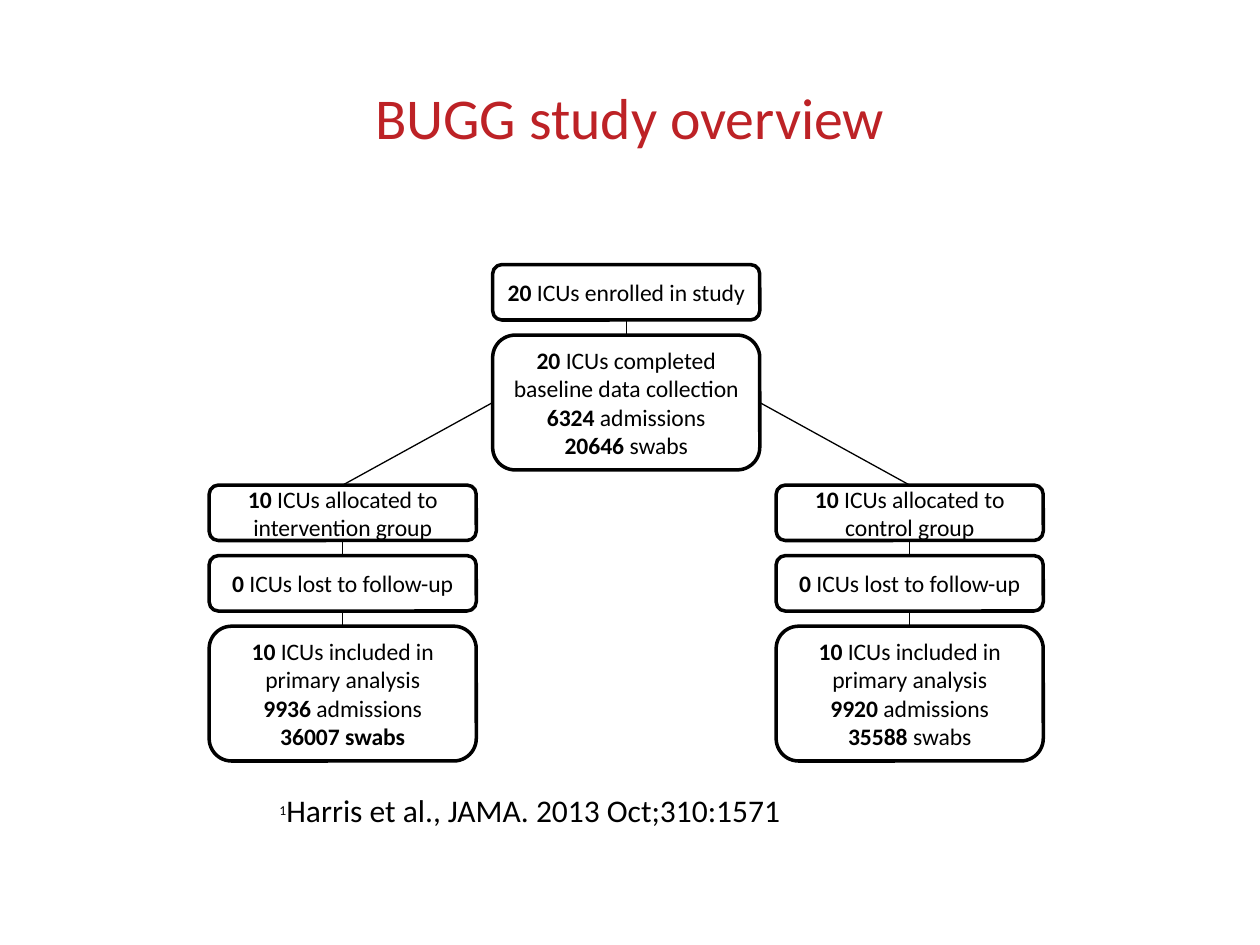
from dataclasses import dataclass
from itertools import accumulate

from lxml.etree import SubElement
from pptx import Presentation
from pptx.dml.color import RGBColor
from pptx.enum.shapes import MSO_CONNECTOR as Connector, MSO_SHAPE as Preset
from pptx.enum.text import MSO_ANCHOR as Anchor, PP_ALIGN as Align
from pptx.oxml.ns import qn
from pptx.util import Inches, Pt

BLACK, WHITE, RED = "000000", "FFFFFF", "BD2226"
FONT = "Calibri"

# Grid: equal columns, rows stacked with one gap
LEFT, COLUMN_PITCH, BOX_WIDTH = 1.66, 2.25, 2.12
TOP, GAP = 2.1, 0.12
ROW_HEIGHTS = [0.44, 1.07, 0.44, 0.44, 1.07]
ROW_TOPS = list(accumulate((height + GAP for height in ROW_HEIGHTS), initial=TOP))


@dataclass
class Step:
    """One box of the flow; each line is a bold part and a regular part."""
    column: int
    row: int
    lines: list[tuple[str, str]]

    @property
    def left(self) -> float:
        return LEFT + self.column * COLUMN_PITCH

    @property
    def top(self) -> float:
        return ROW_TOPS[self.row]

    @property
    def height(self) -> float:
        return ROW_HEIGHTS[self.row]

    @property
    def center(self) -> float:
        return self.left + BOX_WIDTH / 2

    @property
    def top_point(self) -> tuple[float, float]:
        return self.center, self.top

    @property
    def bottom_point(self) -> tuple[float, float]:
        return self.center, self.top + self.height

    def side_point(self, right: bool) -> tuple[float, float]:
        return self.left + BOX_WIDTH * right, self.top + self.height / 2


def color(value: str) -> RGBColor:
    return RGBColor.from_string(value)


def add_span(para, text: str, size: float, fill: str = BLACK, bold: bool = False):
    span = para.add_run()
    span.text = text
    span.font.name, span.font.size, span.font.bold = FONT, Pt(size), bold
    span.font.color.rgb = color(fill)
    return span


def add_text_box(page, left: float, top: float, width: float, height: float):
    box = page.shapes.add_textbox(*map(Inches, (left, top, width, height)))
    box.text_frame.word_wrap = True
    return box.text_frame


def draw_step(page, step: Step) -> None:
    box = page.shapes.add_shape(
        Preset.ROUNDED_RECTANGLE,
        *map(Inches, (step.left, step.top, BOX_WIDTH, step.height)))
    box.shadow.inherit = False
    box.fill.solid()
    box.fill.fore_color.rgb = color(WHITE)
    box.line.color.rgb = color(BLACK)
    box.line.width = Pt(2)
    frame = box.text_frame
    frame.word_wrap, frame.vertical_anchor = True, Anchor.MIDDLE
    frame.margin_left = frame.margin_right = Inches(0.05)
    frame.margin_top = frame.margin_bottom = Inches(0.03)
    for index, (strong, plain) in enumerate(step.lines):
        para = frame.add_paragraph() if index else frame.paragraphs[0]
        para.alignment = Align.CENTER
        add_span(para, strong, 13.5, bold=True)
        if plain:
            add_span(para, plain, 13.5)


def draw_link(page, start: tuple[float, float], end: tuple[float, float]) -> None:
    link = page.shapes.add_connector(Connector.STRAIGHT, *map(Inches, start + end))
    link.line.color.rgb = color(BLACK)
    link.line.width = Pt(0.75)
    SubElement(link._element.spPr, qn("a:effectLst"))


def group_steps(column: int, name: str, admissions: str,
                swabs: tuple[str, str]) -> list[Step]:
    return [
        Step(column, 2, [("10", f" ICUs allocated to {name} group")]),
        Step(column, 3, [("0", " ICUs lost to follow-up")]),
        Step(column, 4, [("10 ", "ICUs included in primary analysis"),
                         (admissions, " admissions"), swabs]),
    ]


def main() -> None:
    deck = Presentation()
    deck.slide_width, deck.slide_height = Inches(10), Inches(7.5)
    page = deck.slides.add_slide(deck.slide_layouts[6])

    # Title
    frame = add_text_box(page, 0.5, 0.3, 9, 1.25)
    frame.vertical_anchor = Anchor.MIDDLE
    frame.paragraphs[0].alignment = Align.CENTER
    add_span(frame.paragraphs[0], "BUGG study overview", 33, RED)

    # Flow boxes: shared trunk and two study arms
    trunk = [
        Step(1, 0, [("20", " ICUs enrolled in study")]),
        Step(1, 1, [("20", " ICUs completed baseline data collection"),
                    ("6324", " admissions"), ("20646", " swabs")]),
    ]
    intervention = group_steps(0, "intervention", "9936", ("36007 swabs", ""))
    control = group_steps(2, "control", "9920", ("35588", " swabs"))
    chains = [trunk, intervention, control]
    for chain in chains:
        for step in chain:
            draw_step(page, step)

    # Links within each chain, then from the trunk to the arms
    for chain in chains:
        for upper, lower in zip(chain, chain[1:]):
            draw_link(page, upper.bottom_point, lower.top_point)
    for arm, right in ((intervention, False), (control, True)):
        draw_link(page, trunk[-1].side_point(right), arm[0].top_point)

    # Citation
    para = add_text_box(page, 2.12, 6.29, 5.06, 0.34).paragraphs[0]
    para.line_spacing = 0.8
    marker = add_span(para, "1", 13.5)
    marker.font._element.set("baseline", "30000")
    add_span(para, "Harris et al., JAMA. 2013 Oct;310:1571", 18)

    deck.save("out.pptx")


if __name__ == "__main__":
    main()
